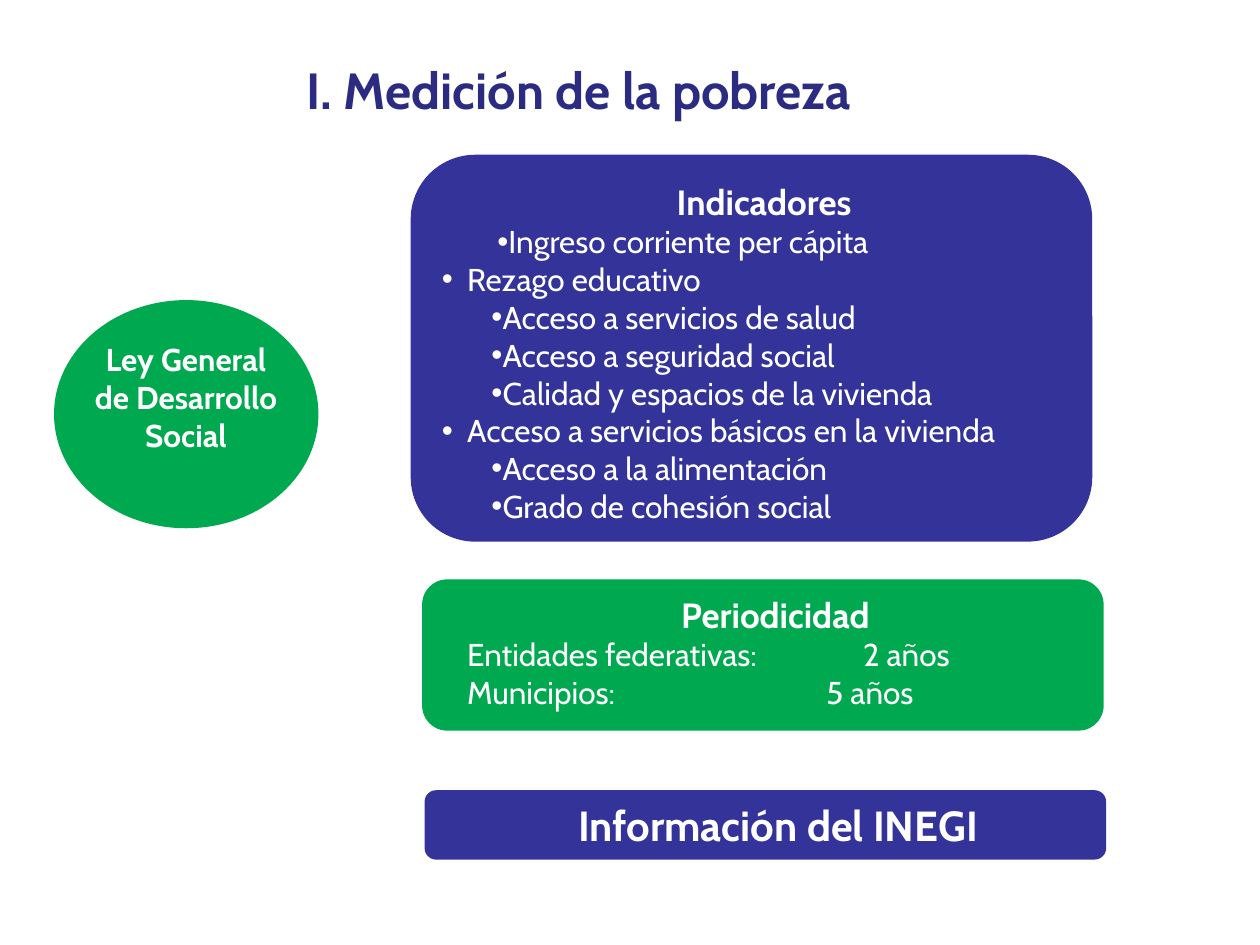
"""Build the slide on how poverty is measured: law, indicators, frequency and source."""
from lxml import etree
from pptx import Presentation
from pptx.dml.color import RGBColor
from pptx.enum.shapes import MSO_SHAPE
from pptx.enum.text import MSO_ANCHOR, MSO_AUTO_SIZE, PP_ALIGN
from pptx.oxml.ns import qn
from pptx.util import Cm, Pt

CENTER, JUSTIFY, LEFT = PP_ALIGN.CENTER, PP_ALIGN.JUSTIFY, PP_ALIGN.LEFT
MIDDLE, TOP = MSO_ANCHOR.MIDDLE, MSO_ANCHOR.TOP
OVAL, ROUNDED = MSO_SHAPE.OVAL, MSO_SHAPE.ROUNDED_RECTANGLE
NO_FIT, GROW = MSO_AUTO_SIZE.NONE, MSO_AUTO_SIZE.SHAPE_TO_FIT_TEXT
COLORS = {"title": "2B2B81", "blue": "333399", "green": "00A94F", "white": "FFFFFF"}
INDENT = Cm(0.51)
FIRST_LINE, HANGING = (0, INDENT), (INDENT, -INDENT)
FIRST_BULLET, INNER_BULLET = (0, Cm(1.12)), (0, Cm(1))


def write_paragraph(paragraph, text, size, bold=True, align=CENTER, color="white",
                    indent=None, bullet=None, tab=None):
    properties = paragraph._p.get_or_add_pPr()
    if indent:
        for name, value in zip(("marL", "indent"), indent):
            properties.set(name, str(value))
    if bullet:
        etree.SubElement(properties, qn("a:buFont"), typeface="Arial")
        etree.SubElement(properties, qn("a:buChar"), char=bullet)
    if tab:
        tabs = etree.SubElement(properties, qn("a:tabLst"))
        etree.SubElement(tabs, qn("a:tab"), pos=str(tab), algn="l")
    paragraph.alignment = align
    run = paragraph.add_run()
    run.text = text
    for name, value in {"name": "Cabin", "size": Pt(size), "bold": bold}.items():
        setattr(run.font, name, value)
    run.font.color.rgb = RGBColor.from_string(COLORS[color])


def fill_frame(frame, entries, **frame_format):
    for name, value in {"word_wrap": True, **frame_format}.items():
        setattr(frame, name, value)
    for index, entry in enumerate(entries):
        paragraph = frame.add_paragraph() if index else frame.paragraphs[0]
        write_paragraph(paragraph, **entry)


presentation = Presentation()
presentation.slide_width, presentation.slide_height = Cm(25.4), Cm(19.05)
slide = presentation.slides.add_slide(presentation.slide_layouts[5])

title = slide.shapes.title
title_place = {"left": Cm(5.92), "top": Cm(1.03), "width": Cm(19.33), "height": Cm(1.52)}
for name, value in title_place.items():
    setattr(title, name, value)
title_entry = {"text": "I. Medición de la pobreza", "size": 29, "align": LEFT, "color": "title"}
fill_frame(title.text_frame, [title_entry], auto_size=NO_FIT, vertical_anchor=MIDDLE)

indicators = [
    ("Ingreso corriente per cápita", FIRST_BULLET),
    ("Rezago educativo", HANGING),
    ("Acceso a servicios de salud", INNER_BULLET),
    ("Acceso a seguridad social", INNER_BULLET),
    ("Calidad y espacios de la vivienda", INNER_BULLET),
    ("Acceso a servicios básicos en la vivienda", HANGING),
    ("Acceso a la alimentación", INNER_BULLET),
    ("Grado de cohesión social", INNER_BULLET),
]
indicator_entries = [{"text": "Indicadores", "size": 20, "indent": FIRST_LINE}] + [
    {"text": text, "size": 18, "bold": False, "align": JUSTIFY, "indent": indent, "bullet": "•"}
    for text, indent in indicators
]
frequencies = [("Entidades federativas:\t2 años", Cm(7.98)), ("Municipios:\t5 años", Cm(7.24))]
frequency_entries = [{"text": "Periodicidad", "size": 20}] + [
    {"text": text, "size": 18, "bold": False, "align": LEFT, "tab": tab}
    for text, tab in frequencies
]
source_entries = [{"text": "Información del INEGI", "size": 24, "indent": FIRST_LINE}]

panels = [
    (OVAL, "green", (1.09, 6.05, 5.33, 4.6), [], 0.25, 0.13),
    (ROUNDED, "blue", (8.28, 3.12, 13.74, 7.8), indicator_entries, 0.25, 0.3),
    (ROUNDED, "blue", (8.56, 15.93, 13.74, 1.4), source_entries, 0.25, 0.13),
    (ROUNDED, "green", (8.51, 11.68, 13.74, 3.05), frequency_entries, 0.76, 0),
]
for kind, color, place, entries, left_margin, top_margin in panels:
    panel = slide.shapes.add_shape(kind, *map(Cm, place))
    panel.shadow.inherit = False
    panel.fill.solid()
    panel.fill.fore_color.rgb = RGBColor.from_string(COLORS[color])
    panel.line.fill.background()
    fill_frame(panel.text_frame, entries, vertical_anchor=MIDDLE,
               margin_left=Cm(left_margin), margin_top=Cm(top_margin))

law = slide.shapes.add_textbox(Cm(1.5), Cm(6.73), Cm(4.5), Cm(3.33))
law_entries = [{"text": text, "size": 18} for text in ("Ley General", "de Desarrollo Social")]
fill_frame(law.text_frame, law_entries, auto_size=GROW, vertical_anchor=TOP)

presentation.save("out.pptx")
